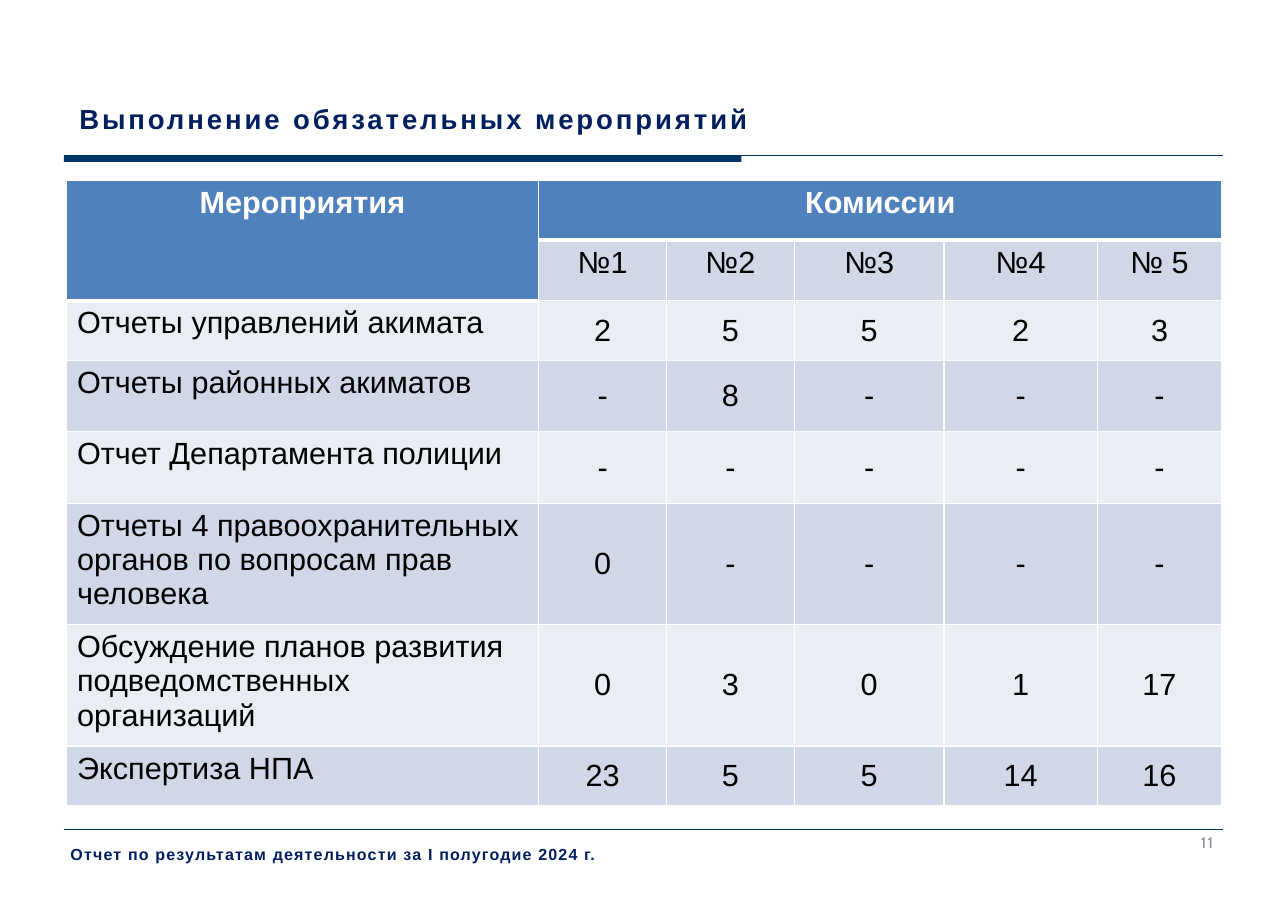
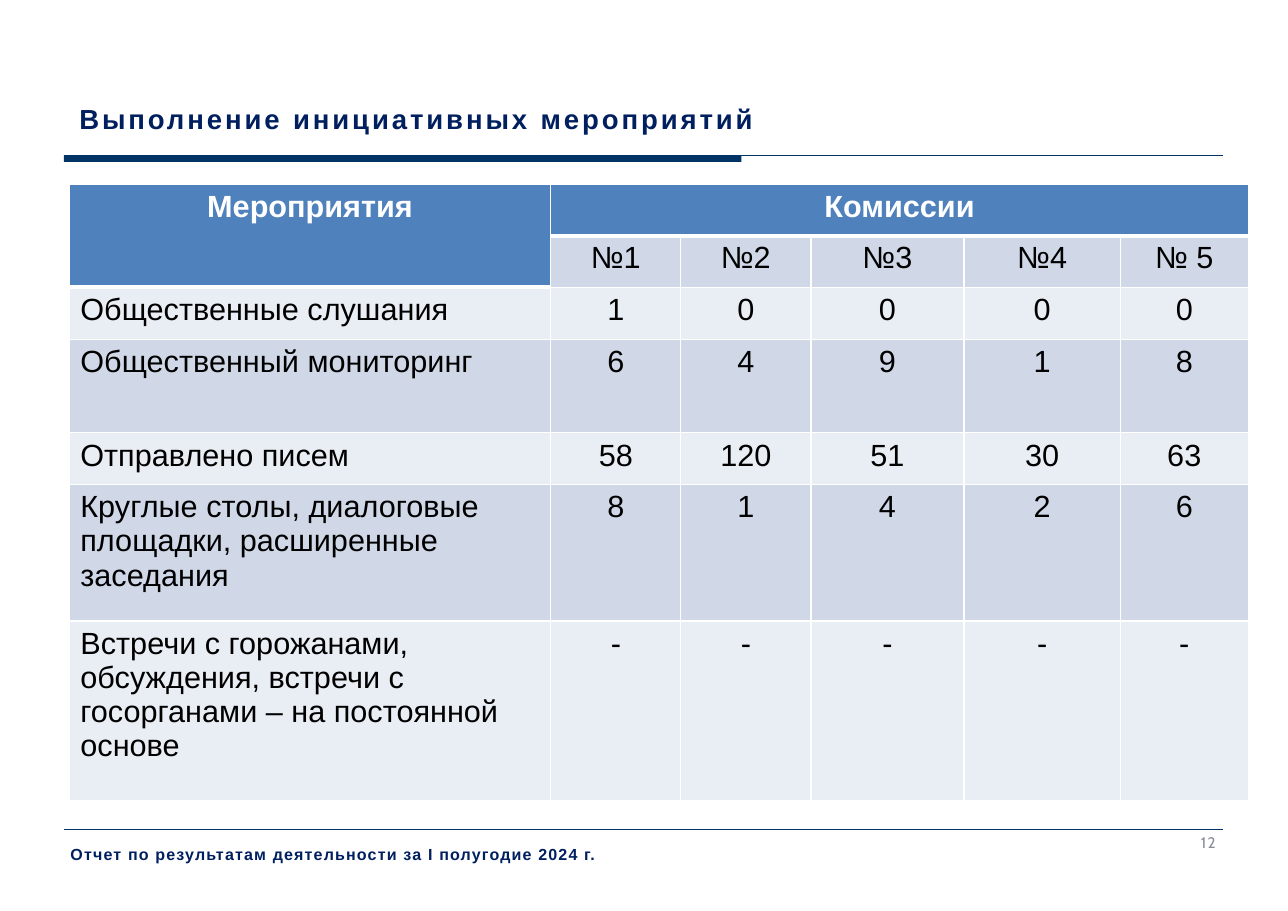
import lxml.etree
import pptx
import pptx.dml.color
import pptx.enum.shapes
import pptx.enum.text
import pptx.oxml.ns
import pptx.util

Inches = pptx.util.Inches
Pt = pptx.util.Pt
RGBColor = pptx.dml.color.RGBColor
PP_ALIGN = pptx.enum.text.PP_ALIGN
MSO_ANCHOR = pptx.enum.text.MSO_ANCHOR
qn = pptx.oxml.ns.qn

WHITE = RGBColor(0xFF, 0xFF, 0xFF)
BLACK = RGBColor(0x00, 0x00, 0x00)
RULE_BLUE = RGBColor(0x00, 0x33, 0x66)
TITLE_BLUE = RGBColor(0x00, 0x1F, 0x5F)
NUMBER_GREY = RGBColor(0x8A, 0x8C, 0x9C)
HEADER_BLUE = RGBColor(0x4F, 0x81, 0xBD)
BANDS = (RGBColor(0xE9, 0xED, 0xF4), RGBColor(0xD0, 0xD8, 0xE8))

FOOTER = "Отчет по результатам деятельности за I полугодие 2024 г."
HEADER_ROWS = [
    ("Мероприятия", "Комиссии", "", "", "", ""),
    ("", "№1", "№2", "№3", "№4", "№ 5"),
]
RULE_LEFT, RULE_RIGHT = 0.58, 11.1
TITLE_RULE_Y, FOOTER_RULE_Y = 1.41, 7.53

SLIDES = [
    {
        "number": "11",
        "title": "Выполнение обязательных мероприятий",
        "position": (0.6, 1.64),
        "columns": (4.29, 1.16, 1.16, 1.36, 1.39, 1.13),
        "row_heights": (0.54, 0.55, 0.54, 0.65, 0.65, 1.1, 1.1, 0.54),
        "value_anchor": MSO_ANCHOR.MIDDLE,
        "rows": [
            ("Отчеты управлений акимата", "2", "5", "5", "2", "3"),
            ("Отчеты районных акиматов", "-", "8", "-", "-", "-"),
            ("Отчет Департамента полиции", "-", "-", "-", "-", "-"),
            ("Отчеты 4 правоохранительных органов по вопросам прав человека",
             "0", "-", "-", "-", "-"),
            ("Обсуждение планов развития подведомственных организаций",
             "0", "3", "0", "1", "17"),
            ("Экспертиза НПА", "23", "5", "5", "14", "16"),
        ],
    },
    {
        "number": "12",
        "title": "Выполнение инициативных мероприятий",
        "position": (0.63, 1.67),
        "columns": (4.37, 1.18, 1.18, 1.39, 1.42, 1.16),
        "row_heights": (0.47, 0.47, 0.47, 0.85, 0.47, 1.24, 1.63),
        "value_anchor": MSO_ANCHOR.TOP,
        "rows": [
            ("Общественные слушания", "1", "0", "0", "0", "0"),
            ("Общественный мониторинг", "6", "4", "9", "1", "8"),
            ("Отправлено писем", "58", "120", "51", "30", "63"),
            ("Круглые столы, диалоговые площадки, расширенные заседания",
             "8", "1", "4", "2", "6"),
            ("Встречи с горожанами, обсуждения, встречи с госорганами"
             " – на постоянной основе", "-", "-", "-", "-", "-"),
        ],
    },
]


def format_run(run, font_name, size, color, bold):
    run.font.name = font_name
    run.font.size = Pt(size)
    run.font.color.rgb = color
    run.font.bold = bold


def add_label(slide, text, box, size, color, spacing, font_name="Arial",
              bold=True, indent=0.01, space_before=0.2, top_inset=0):
    """Add one line of letter-spaced text; spacing is in points."""
    shape = slide.shapes.add_textbox(*map(Inches, box))
    frame = shape.text_frame
    frame.word_wrap = True
    frame.margin_left = frame.margin_right = frame.margin_bottom = 0
    frame.margin_top = Inches(top_inset)
    frame.text = text
    paragraph = frame.paragraphs[0]
    paragraph.space_before = Pt(space_before)
    paragraph._p.get_or_add_pPr().set("marL", str(Inches(indent)))
    run = paragraph.runs[0]
    format_run(run, font_name, size, color, bold)
    run._r.get_or_add_rPr().set("spc", str(round(spacing * 100)))


def add_rule(slide, y):
    rule = slide.shapes.add_connector(
        pptx.enum.shapes.MSO_CONNECTOR.STRAIGHT,
        Inches(RULE_LEFT), Inches(y), Inches(RULE_RIGHT), Inches(y))
    rule.line.color.rgb = RULE_BLUE
    rule.line.width = Pt(0.75)
    lxml.etree.SubElement(rule._element.spPr, qn("a:effectLst"))


def add_frame(slide, title, number):
    """Add the title, rules, footer and page number shared by the slides."""
    bar = slide.shapes.add_shape(
        pptx.enum.shapes.MSO_SHAPE.RECTANGLE,
        *map(Inches, (RULE_LEFT, TITLE_RULE_Y, 6.15, 0.06)))
    bar.shadow.inherit = False
    bar.fill.solid()
    bar.fill.fore_color.rgb = RULE_BLUE
    bar.line.fill.background()
    for y in (TITLE_RULE_Y, FOOTER_RULE_Y):
        add_rule(slide, y)
    add_label(slide, number, (10.76, 7.56, 0.38, 0.31), 10, NUMBER_GREY, 0.8,
              font_name="Cabin", bold=False, indent=0.14)
    add_label(slide, title, (0.71, 0.92, 8.52, 0.33), 18, TITLE_BLUE, 1.9,
              space_before=1, top_inset=0.01)
    add_label(slide, FOOTER, (0.63, 7.67, 7.77, 0.18), 10.5, TITLE_BLUE, 0.8)


def is_header(row, column):
    return row == 0 or (row == 1 and column == 0)


def set_borders(cell, row, column):
    """Draw white borders, thicker along the lower edge of the header."""
    top = 3 if row > 0 and is_header(row - 1, column) else 1
    bottom = 3 if is_header(row, column) else 1
    properties = cell._tc.get_or_add_tcPr()
    for tag, width in (("lnL", 1), ("lnR", 1), ("lnT", top), ("lnB", bottom)):
        line = lxml.etree.SubElement(properties, qn("a:" + tag), w=str(Pt(width)))
        fill = lxml.etree.SubElement(line, qn("a:solidFill"))
        lxml.etree.SubElement(fill, qn("a:srgbClr"), val=str(WHITE))


def fill_cell(cell, text, row, column, value_anchor):
    header = is_header(row, column)
    set_borders(cell, row, column)
    cell.fill.solid()
    cell.fill.fore_color.rgb = HEADER_BLUE if header else BANDS[row % 2]
    is_value = row >= len(HEADER_ROWS) and column > 0
    cell.vertical_anchor = value_anchor if is_value else MSO_ANCHOR.TOP
    if not text:
        return
    cell.text_frame.text = text
    paragraph = cell.text_frame.paragraphs[0]
    centred = header or column > 0
    paragraph.alignment = PP_ALIGN.CENTER if centred else PP_ALIGN.LEFT
    format_run(paragraph.runs[0], "Arial", 20, WHITE if header else BLACK, header)


def add_activity_table(slide, content):
    rows = HEADER_ROWS + content["rows"]
    columns, heights = content["columns"], content["row_heights"]
    size = (sum(columns), sum(heights))
    table = slide.shapes.add_table(
        len(rows), len(columns), *map(Inches, content["position"] + size)).table
    table.horz_banding = False
    for column, width in zip(table.columns, columns):
        column.width = Inches(width)
    for row, height in zip(table.rows, heights):
        row.height = Inches(height)
    table.cell(0, 0).merge(table.cell(1, 0))
    table.cell(0, 1).merge(table.cell(0, len(columns) - 1))
    for row, texts in enumerate(rows):
        for column, text in enumerate(texts):
            fill_cell(table.cell(row, column), text, row, column,
                      content["value_anchor"])


def main():
    presentation = pptx.Presentation()
    presentation.slide_width = Inches(11.69)
    presentation.slide_height = Inches(8.27)
    for content in SLIDES:
        slide = presentation.slides.add_slide(presentation.slide_layouts[6])
        add_frame(slide, content["title"], content["number"])
        add_activity_table(slide, content)
    presentation.save("out.pptx")


if __name__ == "__main__":
    main()
